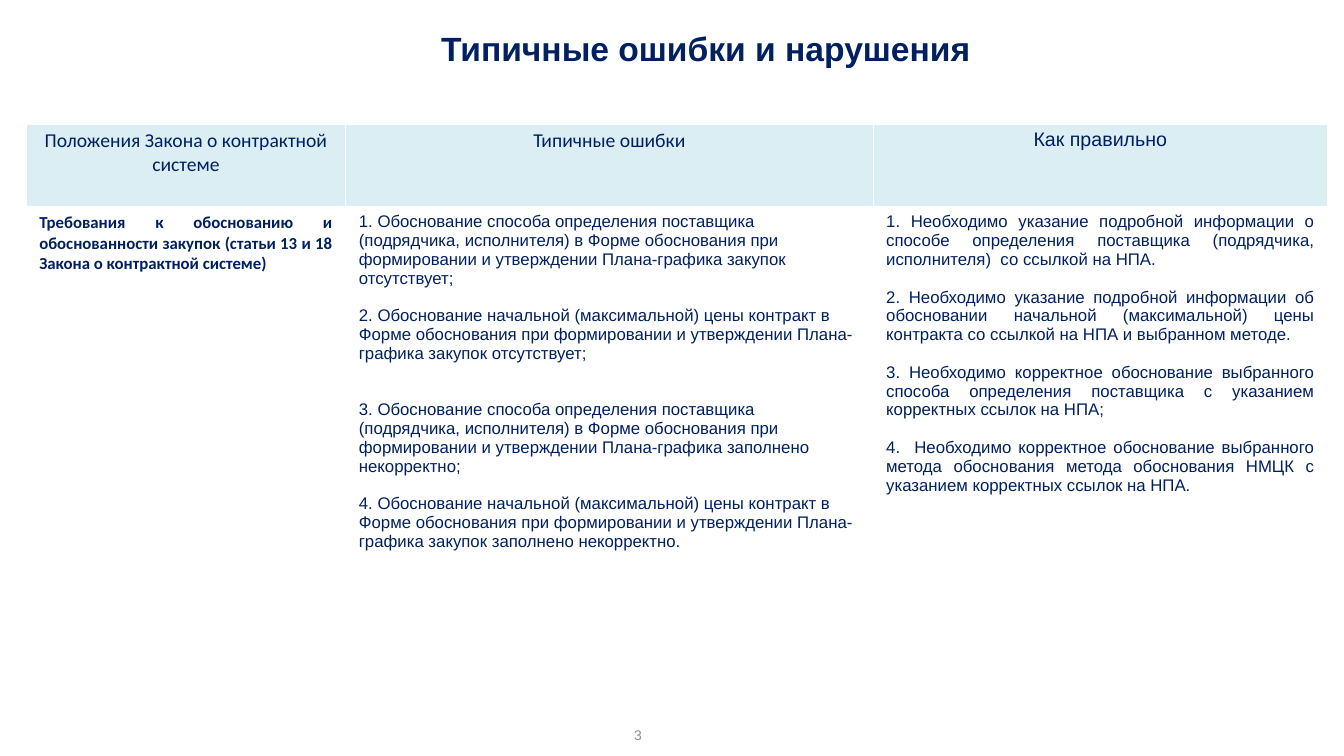
from lxml.etree import SubElement
from pptx import Presentation
from pptx.dml.color import RGBColor
from pptx.enum.text import MSO_ANCHOR as Anchor, PP_ALIGN as Align
from pptx.oxml.ns import qn
from pptx.util import Inches, Pt

# Content
TITLE = "Типичные ошибки и нарушения"
PAGE = "3"
HEADERS = [
    ("Положения Закона о контрактной системе", "Calibri"),
    ("Типичные ошибки", "Calibri"),
    ("Как правильно", "Arial"),
]
RULE = ["Требования к обоснованию и обоснованности закупок "
        "(статьи 13 и 18 Закона о контрактной системе)"]
ERRORS = [
    "1. Обоснование способа определения поставщика (подрядчика, исполнителя) в Форме "
    "обоснования при формировании и утверждении Плана-графика закупок отсутствует;",
    "2. Обоснование начальной (максимальной) цены контракт в Форме обоснования при "
    "формировании и утверждении Плана-графика закупок отсутствует;",
    "3. Обоснование способа определения поставщика (подрядчика, исполнителя) в Форме "
    "обоснования при формировании и утверждении Плана-графика заполнено некорректно;",
    "4. Обоснование начальной (максимальной) цены контракт в Форме обоснования при "
    "формировании и утверждении Плана-графика закупок заполнено некорректно.",
]
FIXES = [
    "1. Необходимо указание подробной информации о способе определения поставщика "
    "(подрядчика, исполнителя)  со ссылкой на НПА.",
    "2. Необходимо указание подробной информации об обосновании начальной "
    "(максимальной) цены контракта со ссылкой на НПА и выбранном методе.",
    "3. Необходимо корректное обоснование выбранного способа определения поставщика "
    "с указанием корректных ссылок на НПА;",
    "4.  Необходимо корректное обоснование выбранного метода обоснования метода "
    "обоснования НМЦК с указанием корректных ссылок на НПА.",
]

# Look and grid
NAVY, GREY, PALE, WHITE = "002060", "8C8D9D", "DBEEF4", "FFFFFF"
SLIDE_W, SLIDE_H = 13.33, 7.5
COLS, ROWS = [3.17, 5.23, 4.51], [0.83, 5]
TABLE_X, TABLE_Y = 0.26, 1.23
TITLE_X, TITLE_H = 0.67, 0.96
LINE = 13.4  # one line of 12 pt Arial, in points


def rgb(color):
    return RGBColor.from_string(color)


def write(tf, paragraphs, size=12, font="Arial", color=NAVY, bold=False,
          align=Align.LEFT, gaps=()):
    """Fill a text frame; gaps are the spaces between paragraphs in points."""
    tf.word_wrap = True
    for i, text in enumerate(paragraphs):
        p = tf.add_paragraph() if i else tf.paragraphs[0]
        p.alignment = align
        p.space_before = Pt(gaps[i - 1] if i else 0)
        r = p.add_run()
        r.text = text
        r.font.size, r.font.name, r.font.bold = Pt(size), font, bold
        r.font.color.rgb = rgb(color)


def style_cell(cell, fill, bottom):
    cell.margin_left = cell.margin_right = Inches(0.13)
    cell.margin_top = cell.margin_bottom = Inches(0.05)
    tc_pr = cell._tc.get_or_add_tcPr()
    for side, width in zip("LRTB", (1, 1, 1, bottom)):
        ln = SubElement(tc_pr, qn(f"a:ln{side}"), w=str(Pt(width)))
        solid = SubElement(ln, qn("a:solidFill"))
        SubElement(solid, qn("a:srgbClr"), val=WHITE)
    if fill:
        cell.fill.solid()
        cell.fill.fore_color.rgb = rgb(fill)
    else:
        cell.fill.background()


prs = Presentation()
prs.slide_width, prs.slide_height = Inches(SLIDE_W), Inches(SLIDE_H)
s = prs.slides.add_slide(prs.slide_layouts[5])

# Title
sp = s.shapes.title
sp.left, sp.top = Inches(TITLE_X), 0
sp.width, sp.height = Inches(SLIDE_W - TITLE_X), Inches(TITLE_H)
sp.text_frame.vertical_anchor = Anchor.MIDDLE
write(sp.text_frame, [TITLE], size=24, bold=True, align=Align.CENTER)

# Table
table = s.shapes.add_table(len(ROWS), len(COLS), Inches(TABLE_X), Inches(TABLE_Y),
                           Inches(sum(COLS)), Inches(sum(ROWS))).table
table.horz_banding = False
for column, width in zip(table.columns, COLS):
    column.width = Inches(width)
for row, height in zip(table.rows, ROWS):
    row.height = Inches(height)

for c, (text, font) in enumerate(HEADERS):
    style_cell(table.cell(0, c), PALE, bottom=3)
    write(table.cell(0, c).text_frame, [text], size=14, font=font, align=Align.CENTER)

body = [
    (RULE, dict(font="Calibri", bold=True, align=Align.JUSTIFY)),
    (ERRORS, dict(gaps=(LINE, 2 * LINE, LINE))),
    (FIXES, dict(align=Align.JUSTIFY, gaps=(LINE,) * 3)),
]
for c, (paragraphs, look) in enumerate(body):
    style_cell(table.cell(1, c), None, bottom=1)
    write(table.cell(1, c).text_frame, paragraphs, **look)

# Page number
tf = s.shapes.add_textbox(Inches(6.19), Inches(7.17), Inches(2.92), Inches(0.25)).text_frame
tf.vertical_anchor = Anchor.MIDDLE
write(tf, [PAGE], size=10, color=GREY)

prs.save("out.pptx")
